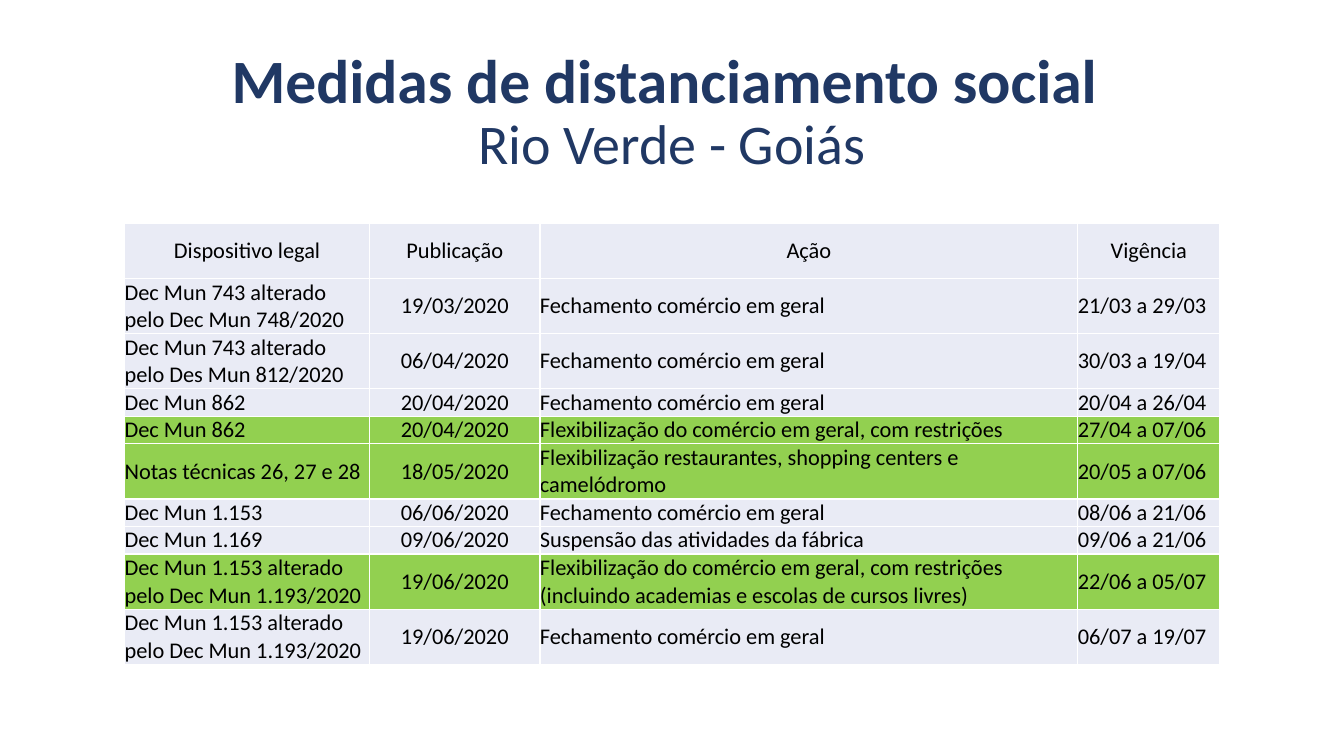
"""Build a slide with a table of social distancing measures in Rio Verde."""
from lxml import etree
from pptx import Presentation
from pptx.dml.color import RGBColor
from pptx.enum.text import MSO_ANCHOR, PP_ALIGN
from pptx.oxml.ns import qn
from pptx.util import Pt

MIDDLE = MSO_ANCHOR.MIDDLE
CENTER, LEFT = PP_ALIGN.CENTER, PP_ALIGN.LEFT
FONT = "Calibri"
COLORS = {"title": "203864", "text": "000000", "closed": "E9EBF5",
          "relaxed": "92D050", "border": "FFFFFF"}
BLANK_LAYOUT = 6
PUBLICATION_COLUMN = 1
HEADER_HEIGHT, LINE_HEIGHT = 39.4, 19.7
COLUMN_WIDTHS = [175, 121.7, 384.2, 101.5]
HEADER = ("Dispositivo legal", "Publicação", "Ação", "Vigência")
CLOSING = "Fechamento comércio em geral"
RELAXING = "Flexibilização do comércio em geral, com restrições"
MEASURES = [
    (2, "closed", "Dec Mun 743 alterado pelo Dec Mun 748/2020", "19/03/2020",
     CLOSING, "21/03 a 29/03"),
    (2, "closed", "Dec Mun 743 alterado pelo Des Mun 812/2020", "06/04/2020",
     CLOSING, "30/03 a 19/04"),
    (1, "closed", "Dec Mun 862", "20/04/2020", CLOSING, "20/04 a 26/04"),
    (1, "relaxed", "Dec Mun 862", "20/04/2020", RELAXING, "27/04 a 07/06"),
    (2, "relaxed", "Notas técnicas 26, 27 e 28", "18/05/2020",
     "Flexibilização restaurantes, shopping centers e camelódromo", "20/05 a 07/06"),
    (1, "closed", "Dec Mun 1.153", "06/06/2020", CLOSING, "08/06 a 21/06"),
    (1, "closed", "Dec Mun 1.169", "09/06/2020",
     "Suspensão das atividades da fábrica", "09/06 a 21/06"),
    (2, "relaxed", "Dec Mun 1.153 alterado pelo Dec Mun 1.193/2020", "19/06/2020",
     RELAXING + " (incluindo academias e escolas de cursos livres)", "22/06 a 05/07"),
    (2, "closed", "Dec Mun 1.153 alterado pelo Dec Mun 1.193/2020", "19/06/2020",
     CLOSING, "06/07 a 19/07"),
]


def add_span(para, text, size, color, bold=False):
    span = para.add_run()
    span.text = text
    span.font.name = FONT
    span.font.size = Pt(size)
    span.font.bold = bold
    span.font.color.rgb = RGBColor.from_string(COLORS[color])


def style_cell(cell, color):
    cell.margin_left = cell.margin_right = cell.margin_top = cell.margin_bottom = 0
    cell.vertical_anchor = MIDDLE
    properties = cell._tc.get_or_add_tcPr()
    for side in ("a:lnL", "a:lnR", "a:lnT", "a:lnB"):
        line = etree.SubElement(properties, qn(side), w=str(Pt(1)))
        fill = etree.SubElement(line, qn("a:solidFill"))
        etree.SubElement(fill, qn("a:srgbClr"), val=COLORS["border"])
    cell.fill.solid()
    cell.fill.fore_color.rgb = RGBColor.from_string(COLORS[color])


deck = Presentation()
deck.slide_width, deck.slide_height = Pt(960), Pt(540)
page = deck.slides.add_slide(deck.slide_layouts[BLANK_LAYOUT])

box = page.shapes.add_textbox(Pt(66), Pt(28.75), Pt(828), Pt(104.4))
box.text_frame.word_wrap = True
box.text_frame.vertical_anchor = MIDDLE
para = box.text_frame.paragraphs[0]
para.alignment = CENTER
para.line_spacing = 0.9
add_span(para, "Medidas de distanciamento social ", 44, "title", bold=True)
para.add_line_break()
add_span(para, "Rio Verde - Goiás", 40, "title")

rows = [(HEADER_HEIGHT, "closed", HEADER)]
rows += [(lines * LINE_HEIGHT, color, texts) for lines, color, *texts in MEASURES]
table = page.shapes.add_table(
    len(rows), len(COLUMN_WIDTHS), Pt(89), Pt(159.6),
    Pt(sum(COLUMN_WIDTHS)), Pt(sum(height for height, _, _ in rows))).table
table.first_row = False
table.horz_banding = False
for column, width in zip(table.columns, COLUMN_WIDTHS):
    column.width = Pt(width)

for row_index, (height, color, texts) in enumerate(rows):
    table.rows[row_index].height = Pt(height)
    for column_index, text in enumerate(texts):
        cell = table.cell(row_index, column_index)
        style_cell(cell, color)
        para = cell.text_frame.paragraphs[0]
        centered = row_index == 0 or column_index == PUBLICATION_COLUMN
        para.alignment = CENTER if centered else LEFT
        add_span(para, text, 16, "text")

deck.save("out.pptx")
